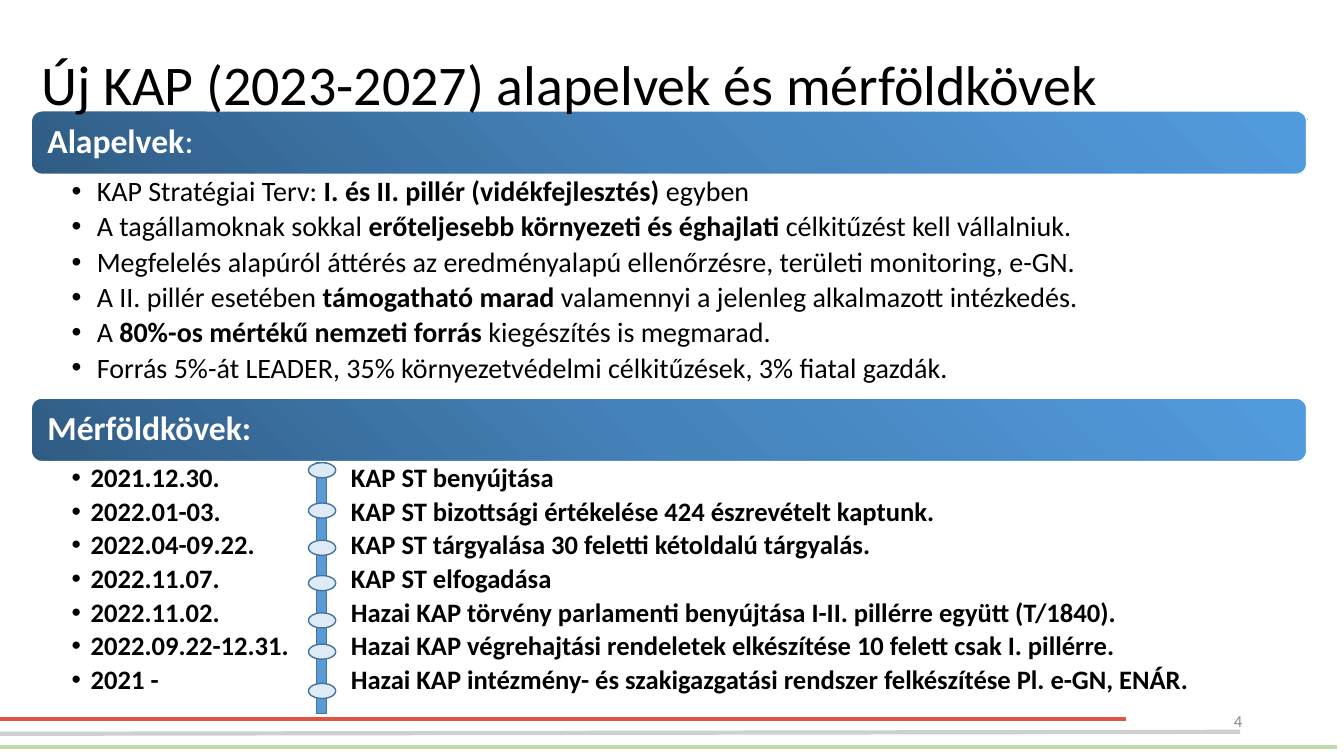
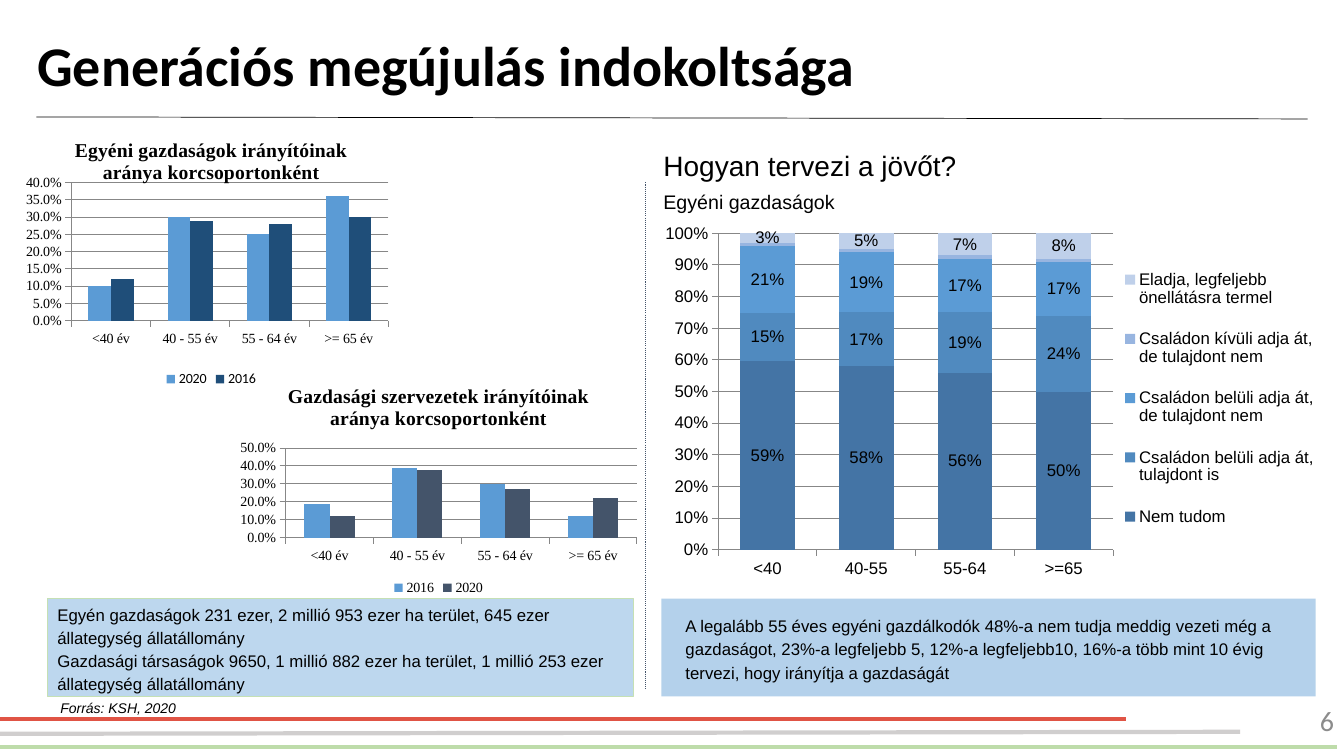
"""Build two slides on the new KAP: principles with milestones, and generational renewal."""
from lxml import etree
from pptx import Presentation
from pptx.chart.data import CategoryChartData
from pptx.dml.color import RGBColor
from pptx.enum.chart import XL_CHART_TYPE, XL_LABEL_POSITION, XL_LEGEND_POSITION, XL_TICK_MARK
from pptx.enum.dml import MSO_LINE
from pptx.enum.shapes import MSO_CONNECTOR, MSO_SHAPE
from pptx.enum.text import MSO_ANCHOR, MSO_AUTO_SIZE, PP_ALIGN
from pptx.oxml.ns import qn
from pptx.util import Inches, Pt

LEFT, RIGHT = PP_ALIGN.LEFT, PP_ALIGN.RIGHT
TOP, MIDDLE = MSO_ANCHOR.TOP, MSO_ANCHOR.MIDDLE
CLUSTERED, STACKED = XL_CHART_TYPE.COLUMN_CLUSTERED, XL_CHART_TYPE.COLUMN_STACKED_100
LEGEND_BOTTOM, LEGEND_RIGHT = XL_LEGEND_POSITION.BOTTOM, XL_LEGEND_POSITION.RIGHT
LABEL_CENTER = XL_LABEL_POSITION.CENTER
TICK_OUT, TICK_NONE = XL_TICK_MARK.OUTSIDE, XL_TICK_MARK.NONE
STRAIGHT, DOTTED = MSO_CONNECTOR.STRAIGHT, MSO_LINE.ROUND_DOT
RECTANGLE, ROUNDED, OVAL = MSO_SHAPE.RECTANGLE, MSO_SHAPE.ROUNDED_RECTANGLE, MSO_SHAPE.OVAL

BLACK, WHITE = RGBColor(0, 0, 0), RGBColor(255, 255, 255)
GRAY, LIGHT_GRAY, GRID = RGBColor(0x8C, 0x8C, 0x8C), RGBColor(0xD0, 0xCE, 0xCE), RGBColor(0x87, 0x87, 0x87)
RED, GREEN, PALE_GREEN = RGBColor(0xE0, 0x54, 0x45), RGBColor(0xBE, 0xDC, 0xAA), RGBColor(0xC5, 0xE0, 0xB4)
BLUE, NAVY, SLATE = RGBColor(0x5B, 0x9B, 0xD5), RGBColor(0x1F, 0x4E, 0x79), RGBColor(0x44, 0x54, 0x6A)
OUTLINE, DOT_BLUE = RGBColor(0x43, 0x73, 0x9E), RGBColor(0xDE, 0xEB, 0xF7)
NOTE_BLUE, ANSWER_BLUE = RGBColor(0xBD, 0xD7, 0xEE), RGBColor(0xB4, 0xD1, 0xEB)
STACK_COLORS = [RGBColor(0x44, 0x74, 0xA5), RGBColor(0x50, 0x8A, 0xBF), BLUE,
                RGBColor(0x98, 0xB5, 0xE0), RGBColor(0xBF, 0xD0, 0xEA)]
BAND_STOPS = [(0, "305C84"), (50, "4583BB"), (100, "529BDE")]
SANS, ARIAL, SERIF = "Calibri", "Arial", "Times New Roman"

FRAME_LINES = [
    ((0, 7.13, 11.17, 7.13), RED, 3),
    ((0, 7.41, 13.26, 7.41), GREEN, 3),
    ((0, 7.28, 12.3, 7.26), LIGHT_GRAY, 3),
    ((0.36, 1.16, 12.97, 1.18), BLACK, 0.5),
]
PRINCIPLES = [
    "KAP Stratégiai Terv:* I. és II. pillér (vidékfejlesztés) *egyben",
    "A tagállamoknak sokkal *erőteljesebb környezeti és éghajlati *célkitűzést kell vállalniuk.",
    "Megfelelés alapúról áttérés az eredményalapú ellenőrzésre, területi monitoring, e-GN.",
    "A II. pillér esetében *támogatható marad *valamennyi a jelenleg alkalmazott intézkedés.",
    "A *80%-os mértékű nemzeti forrás *kiegészítés is megmarad.",
    "Forrás 5%-át LEADER, 35% környezetvédelmi célkitűzések, 3% fiatal gazdák.",
]
MILESTONES = [
    ("2021.12.30.", "KAP ST benyújtása", 4.59),
    ("2022.01-03.", "KAP ST bizottsági értékelése 424 észrevételt kaptunk.", 4.99),
    ("2022.04-09.22.", "KAP ST tárgyalása 30 feletti kétoldalú tárgyalás.", 5.36),
    ("2022.11.07.", "KAP ST elfogadása", 5.71),
    ("2022.11.02.", "Hazai KAP törvény parlamenti benyújtása I-II. pillérre együtt (T/1840).", 6.08),
    ("2022.09.22-12.31.", "Hazai KAP végrehajtási rendeletek elkészítése 10 felett csak I. pillérre.", 6.39),
    ("2021 -", "Hazai KAP intézmény- és szakigazgatási rendszer felkészítése Pl. e-GN, ENÁR.", 6.78),
]
FARM_FACTS = [
    "Egyén gazdaságok 231 ezer, 2 millió 953 ezer ha terület, 645 ezer állategység állatállomány",
    "Gazdasági társaságok 9650, 1 millió 882 ezer ha terület, 1 millió 253 ezer állategység állatállomány",
]
FUTURE_FACT = ("A legalább 55 éves egyéni gazdálkodók 48%-a nem tudja meddig vezeti még a gazdaságot, "
               "23%-a legfeljebb 5, 12%-a legfeljebb10, 16%-a több mint 10 évig tervezi, "
               "hogy irányítja a gazdaságát")
AGES = ["<40 év", "40 - 55 év", "55 - 64 év", ">= 65 év"]
FUTURE_AGES = ["<40", "40-55", "55-64", ">=65"]
INDIVIDUAL_FARMS = {"2020": (0.1, 0.3, 0.25, 0.36), "2016": (0.12, 0.29, 0.28, 0.3)}
ORGANISATIONS = {"2016": (0.19, 0.39, 0.3, 0.12), "2020": (0.12, 0.38, 0.27, 0.22)}
OUTSIDE_FAMILY = "Családon kívüli adja át, de tulajdont nem"
FUTURE_PLANS = {
    "Nem tudom": (0.59, 0.58, 0.56, 0.5),
    "Családon belüli adja át, tulajdont is": (0.15, 0.17, 0.19, 0.24),
    "Családon belüli adja át, de tulajdont nem": (0.21, 0.19, 0.17, 0.17),
    OUTSIDE_FAMILY: (0.01, 0.01, 0.01, 0.01),
    "Eladja, legfeljebb önellátásra termel": (0.03, 0.05, 0.07, 0.08),
}


def inches(values):
    return [Inches(value) for value in values]


def write_text(frame, texts, size=12, font=SANS, color=BLACK, bold=False, italic=False, align=LEFT,
               anchor=TOP, insets=(0.1, 0.05, 0.1, 0.05), line=1.0, after=0, indent=0, bullet=False, tab=None):
    """Write paragraphs; asterisks switch bold on and off."""
    frame.word_wrap = True
    frame.auto_size = MSO_AUTO_SIZE.NONE
    frame.vertical_anchor = anchor
    frame.margin_left, frame.margin_top, frame.margin_right, frame.margin_bottom = inches(insets)
    for index, text in enumerate(texts):
        para = frame.paragraphs[0] if index == 0 else frame.add_paragraph()
        para.alignment, para.line_spacing = align, line
        para.space_before, para.space_after = Pt(0), Pt(after)
        properties = para._p.get_or_add_pPr()
        properties.set("marL", str(Inches(indent)))
        properties.set("indent", str(-Inches(indent) if bullet else 0))
        if bullet:
            etree.SubElement(properties, qn("a:buChar")).set("char", "•")
        if tab:
            stop = etree.SubElement(etree.SubElement(properties, qn("a:tabLst")), qn("a:tab"))
            stop.set("pos", str(Inches(tab)))
            stop.set("algn", "l")
        for position, piece in enumerate(text.split("*")):
            if piece:
                span = para.add_run()
                span.text = piece
                span.font.name, span.font.size = font, Pt(size)
                span.font.bold = bold != (position % 2 == 1)
                span.font.italic = italic
                span.font.color.rgb = color


def place(shape, area):
    shape.left, shape.top, shape.width, shape.height = inches(area)
    return shape


def add_text(slide, area, texts, **style):
    box = slide.shapes.add_textbox(*inches(area))
    write_text(box.text_frame, texts, **style)
    return box


def add_line(slide, ends, color, width, dash=None):
    line = slide.shapes.add_connector(STRAIGHT, *inches(ends))
    line.line.color.rgb, line.line.width = color, Pt(width)
    if dash:
        line.line.dash_style = dash
    etree.SubElement(line.element.spPr, qn("a:effectLst"))


def add_box(slide, kind, area, fill=None, outline=None, width=1):
    box = slide.shapes.add_shape(kind, *inches(area))
    box.shadow.inherit = False
    if fill is not None:
        box.fill.solid()
        box.fill.fore_color.rgb = fill
    if outline is None:
        box.line.fill.background()
    else:
        box.line.color.rgb, box.line.width = outline, Pt(width)
    return box


def add_band(slide, top, text):
    band = add_box(slide, ROUNDED, (0.31, top, 12.65, 0.63), outline=WHITE)
    band.fill.gradient()
    band.fill.gradient_angle = 45
    stops = band.element.spPr.find(".//" + qn("a:gsLst"))
    for stop in list(stops):
        stops.remove(stop)
    for percent, color in BAND_STOPS:
        stop = etree.SubElement(stops, qn("a:gs"), pos=str(percent * 1000))
        etree.SubElement(stop, qn("a:srgbClr"), val=color)
    write_text(band.text_frame, [text], size=24, color=WHITE, anchor=MIDDLE, line=0.9,
               insets=(0.13, 0.1, 0.1, 0.1))


def add_page(deck, layout, title, title_area, number, number_left, number_size, **title_style):
    page = deck.slides.add_slide(deck.slide_layouts[layout])
    for ends, color, width in FRAME_LINES:
        add_line(page, ends, color, width)
    place(page.shapes.title, title_area)
    write_text(page.shapes.title.text_frame, [title], size=40, **title_style)
    add_text(page, (number_left, 6.95, 3, 0.4), [number], size=number_size, color=GRAY,
             align=RIGHT, anchor=MIDDLE)
    return page


def set_layout(parent, shares, inner=False):
    """Fix the place of a chart part by shares of the chart's size."""
    for old in parent.findall(qn("c:layout")):
        parent.remove(old)
    layout = etree.Element(qn("c:layout"))
    manual = etree.SubElement(layout, qn("c:manualLayout"))
    settings = [("layoutTarget", "inner")] if inner else []
    settings += [("xMode", "edge"), ("yMode", "edge"), *zip("xywh", shares)]
    for name, value in settings:
        etree.SubElement(manual, qn("c:" + name)).set("val", str(value))
    if inner:
        parent.insert(0, layout)
    else:
        parent.find(qn("c:legendPos")).addnext(layout)


def add_columns(slide, kind, area, ages, groups, colors, plot_area, size, font, axis_font,
                value_format, top_value, step, gap, legend_place, title=None):
    data = CategoryChartData(number_format=value_format)
    data.categories = ages
    for name, values in groups.items():
        data.add_series(name, values)
    chart = slide.shapes.add_chart(kind, *inches(area), data).chart
    chart.font.size, chart.font.name, chart.font.color.rgb = Pt(size), font, BLACK
    chart.has_title = title is not None
    if title:
        write_text(chart.chart_title.text_frame, [title], size=14, font=SERIF, bold=True, align=PP_ALIGN.CENTER)
    chart.has_legend = True
    chart.legend.position, chart.legend.include_in_layout = legend_place, False
    chart.legend.font.size, chart.legend.font.name = Pt(size), font
    for axis in (chart.category_axis, chart.value_axis):
        axis.major_tick_mark, axis.minor_tick_mark = TICK_OUT, TICK_NONE
        axis.format.line.color.rgb = GRID
        axis.tick_labels.font.size, axis.tick_labels.font.name = Pt(size), axis_font
    scale = chart.value_axis
    scale.minimum_scale, scale.maximum_scale, scale.major_unit = 0, top_value, step
    scale.tick_labels.number_format, scale.tick_labels.number_format_is_linked = value_format, False
    scale.has_major_gridlines = True
    scale.major_gridlines.format.line.color.rgb = GRID
    plot = chart.plots[0]
    plot.gap_width, plot.vary_by_categories = gap, False
    plot.overlap = 100 if kind == STACKED else 0
    for series, color in zip(plot.series, colors):
        series.format.fill.solid()
        series.format.fill.fore_color.rgb = color
    set_layout(chart.element.find(".//" + qn("c:plotArea")), plot_area, inner=True)
    return chart


def build_principles(deck):
    page = add_page(deck, 3, "Új KAP (2023-2027) alapelvek és mérföldkövek", (0.31, 0.44, 11.05, 0.77),
                    "4", 9.42, 12)
    add_band(page, 1.1, "*Alapelvek*:")
    add_band(page, 3.95, "*Mérföldkövek:")
    page.shapes.element.append(page.shapes.title.element)
    principles, milestones = [page.placeholders[index] for index in (1, 2)]
    place(principles, (0.31, 1.73, 12.65, 2.23))
    write_text(principles.text_frame, PRINCIPLES, size=20, line=0.9, after=3.6, indent=0.25, bullet=True,
               insets=(0.4, 0.03, 0.16, 0.03))
    place(milestones, (0.31, 4.58, 12.65, 2.5))
    write_text(milestones.text_frame, [f"{date}\t{event}" for date, event, top in MILESTONES], size=19,
               bold=True, line=0.9, after=3.5, indent=0.19, bullet=True, tab=2.77,
               insets=(0.4, 0.03, 0.19, 0.03))
    add_box(page, RECTANGLE, (3.14, 4.59, 0.1, 2.49), BLUE, OUTLINE)
    for date, event, top in MILESTONES:
        add_box(page, OVAL, (3.06, top, 0.27, 0.15), DOT_BLUE, OUTLINE)


def build_renewal(deck):
    page = add_page(deck, 5, "Generációs megújulás indokoltsága", (0.35, 0.17, 11.47, 0.93),
                    "6", 10.33, 20, bold=True, anchor=MIDDLE, insets=(0.02, 0.1, 0, 0.1))
    note_style = dict(font=ARIAL, anchor=MIDDLE, insets=(0.1, 0.1, 0.1, 0.1))
    facts = add_box(page, RECTANGLE, (0.47, 5.94, 5.81, 0.97), NOTE_BLUE, PALE_GREEN, 0.75)
    write_text(facts.text_frame, FARM_FACTS, line=1.15, **note_style)
    add_text(page, (0.5, 6.95, 12.12, 0.15), ["Forrás: KSH, 2020"], size=10, italic=True, **note_style)
    heading = add_text(page, (6.56, 1.37, 6.26, 0.88), ["Hogyan tervezi a jövőt?", "Egyéni gazdaságok"],
                       size=20, font=ARIAL, insets=(0.02, 0.1, 0, 0.1))
    subheading = heading.text_frame.paragraphs[1]
    subheading.space_before = Pt(6)
    subheading.runs[0].font.size = Pt(14)
    answer = add_box(page, RECTANGLE, (6.56, 5.94, 6.49, 0.97), ANSWER_BLUE)
    write_text(answer.text_frame, [FUTURE_FACT], line=1.15, indent=0.14, **note_style)
    add_line(page, (6.4, 1.81, 6.4, 6.84), SLATE, 0.75, DOTTED)

    plans = add_columns(page, STACKED, (6.56, 2.2, 6.55, 3.61), FUTURE_AGES, FUTURE_PLANS, STACK_COLORS,
                        (0.086, 0.032, 0.598, 0.87), 12, ARIAL, ARIAL, "0%", 1, 0.1, 80, LEGEND_RIGHT)
    set_layout(plans.legend._element, (0.69, 0.07, 0.31, 0.83))
    for series in plans.plots[0].series:
        if series.name != OUTSIDE_FAMILY:
            labels = series.data_labels
            labels.show_value, labels.position = True, LABEL_CENTER
            labels.number_format, labels.number_format_is_linked = "0%", False

    shared = dict(size=10, axis_font=SERIF, value_format="0.0%", gap=150, legend_place=LEGEND_BOTTOM)
    add_columns(page, CLUSTERED, (0.21, 1.22, 3.77, 2.66), AGES, INDIVIDUAL_FARMS, (BLUE, NAVY),
                (0.132, 0.223, 0.834, 0.515), font=SANS, top_value=0.4, step=0.05,
                title="Egyéni gazdaságok irányítóinak aránya korcsoportonként", **shared)
    add_columns(page, CLUSTERED, (2.3, 3.67, 4.1, 2.28), AGES, ORGANISATIONS, (BLUE, SLATE),
                (0.13, 0.34, 0.85, 0.39), font=SERIF, top_value=0.5, step=0.1,
                title="Gazdasági szervezetek irányítóinak aránya korcsoportonként", **shared)


def main():
    deck = Presentation()
    deck.slide_width, deck.slide_height = inches((13.33, 7.5))
    build_principles(deck)
    build_renewal(deck)
    deck.save("out.pptx")


if __name__ == "__main__":
    main()
